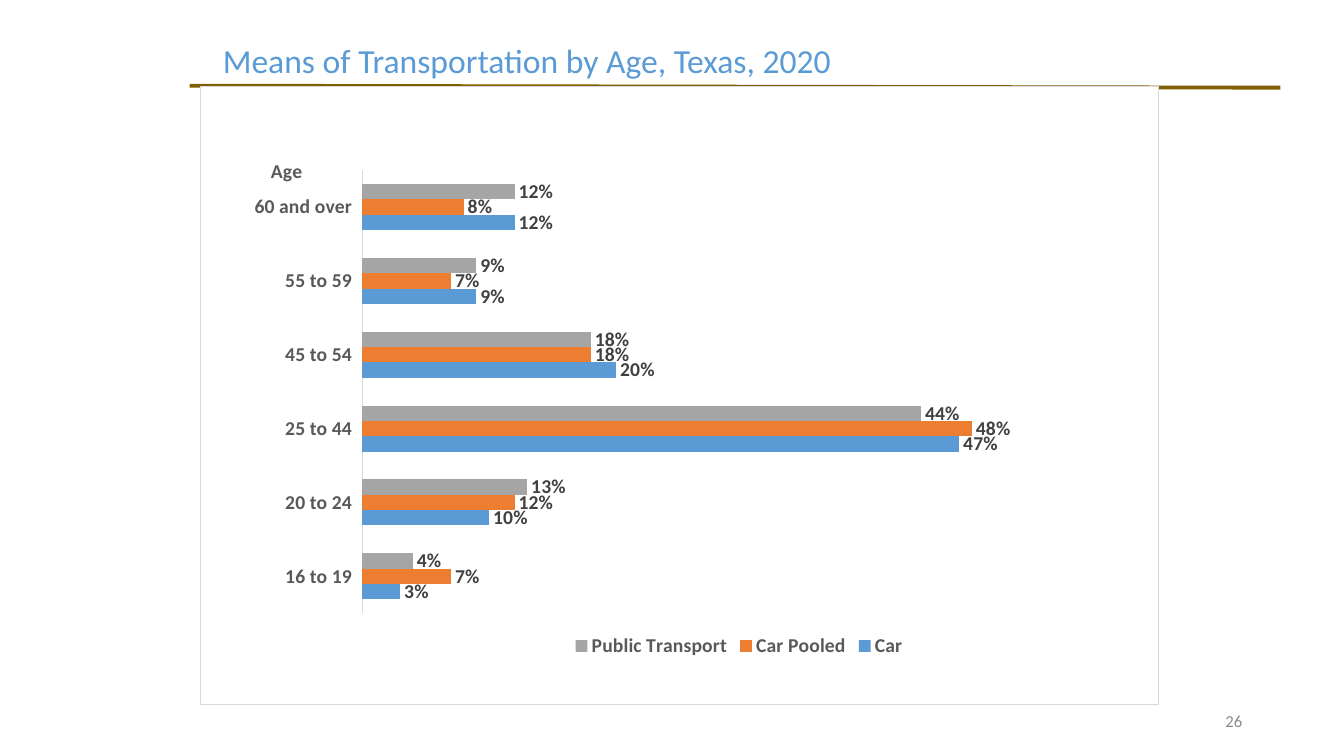
from lxml.etree import SubElement
from pptx import Presentation
from pptx.chart.data import CategoryChartData
from pptx.dml.color import RGBColor
from pptx.enum.chart import XL_CHART_TYPE as ChartType
from pptx.enum.chart import XL_LABEL_POSITION as LabelPos
from pptx.enum.chart import XL_LEGEND_POSITION as LegendPos
from pptx.enum.chart import XL_TICK_LABEL_POSITION as TickLabelPos
from pptx.enum.chart import XL_TICK_MARK as TickMark
from pptx.enum.shapes import MSO_CONNECTOR as Connector
from pptx.enum.text import MSO_ANCHOR as Anchor
from pptx.enum.text import PP_ALIGN as Align
from pptx.oxml import parse_xml
from pptx.oxml.ns import nsdecls, qn
from pptx.util import Pt

PX = 9144
FONT = "Calibri"
BLUE = RGBColor(0x5B, 0x9B, 0xD5)
ORANGE = RGBColor(0xED, 0x7D, 0x31)
GRAY = RGBColor(0xA5, 0xA5, 0xA5)
BROWN = RGBColor(0x80, 0x60, 0x00)
RULE_GRAY = RGBColor(0xD9, 0xD9, 0xD9)
AXIS_TEXT = RGBColor(0x59, 0x59, 0x59)
LABEL_TEXT = RGBColor(0x40, 0x40, 0x40)
NUMBER_TEXT = RGBColor(0x8C, 0x8C, 0x8C)
WHITE = RGBColor(0xFF, 0xFF, 0xFF)

AGES = ["16 to 19", "20 to 24", "25 to 44", "45 to 54", "55 to 59", "60 and over"]
MEANS = [
    ("Car", BLUE, [0.03, 0.10, 0.47, 0.20, 0.09, 0.12]),
    ("Car Pooled", ORANGE, [0.07, 0.12, 0.48, 0.18, 0.07, 0.08]),
    ("Public Transport", GRAY, [0.04, 0.13, 0.44, 0.18, 0.09, 0.12]),
]


def emu(*lengths):
    return [length * PX for length in lengths]


def style_font(font, size, color, bold=False):
    font.name = FONT
    font.size = Pt(size)
    font.bold = bold
    font.color.rgb = color


def set_layout(parent, index, **settings):
    for old in parent.findall(qn("c:layout")):
        parent.remove(old)
    layout = parse_xml(f"<c:layout {nsdecls('c')}/>")
    manual = SubElement(layout, qn("c:manualLayout"))
    for tag, value in settings.items():
        SubElement(manual, qn(f"c:{tag}")).set("val", str(value))
    parent.insert(index, layout)


def add_title(slide, box):
    sp = slide.shapes.title
    sp.left, sp.top, sp.width, sp.height = emu(*box)
    tf = sp.text_frame
    tf.text = "Means of Transportation by Age, Texas, 2020"
    tf.word_wrap = False
    tf.vertical_anchor = Anchor.MIDDLE
    p = tf.paragraphs[0]
    p.alignment = Align.LEFT
    p.line_spacing = 0.9
    style_font(p.runs[0].font, 24, BLUE)


def add_title_rule(slide, box):
    x, y, w, h = box
    line = slide.shapes.add_connector(Connector.STRAIGHT, *emu(x, y, x + w, y + h))
    line.line.color.rgb = BROWN
    line.line.width = Pt(2.75)
    SubElement(line._element.spPr, qn("a:effectLst"))


def add_slide_number(slide, box):
    tf = slide.shapes.add_textbox(*emu(*box)).text_frame
    tf.text = "26"
    tf.word_wrap = True
    tf.vertical_anchor = Anchor.MIDDLE
    p = tf.paragraphs[0]
    p.alignment = Align.RIGHT
    style_font(p.runs[0].font, 12, NUMBER_TEXT)


def style_axes(chart):
    ages = chart.category_axis
    ages.major_tick_mark = ages.minor_tick_mark = TickMark.NONE
    ages.tick_label_position = TickLabelPos.LOW
    ages.format.line.color.rgb = RULE_GRAY
    ages.format.line.width = Pt(0.75)
    style_font(ages.tick_labels.font, 14, AXIS_TEXT, True)

    tf = ages.axis_title.text_frame
    tf.text = "Age"
    style_font(tf.paragraphs[0].runs[0].font, 14, AXIS_TEXT, True)
    body = tf._txBody.find(qn("a:bodyPr"))
    body.set("rot", "0")
    body.set("vert", "horz")
    set_layout(ages.axis_title._element, 1, xMode="edge", yMode="edge", x=0.07, y=0.11)

    shares = chart.value_axis
    shares.minimum_scale, shares.maximum_scale = 0, 0.6
    shares.has_major_gridlines = False
    shares.tick_labels.number_format = "0.0%"
    shares.tick_labels.number_format_is_linked = False
    shares.visible = False


def style_frame(chart):
    chart_space = chart._chartSpace
    frame = parse_xml(
        f'<c:spPr {nsdecls("c", "a")}>'
        f'<a:solidFill><a:srgbClr val="{WHITE}"/></a:solidFill>'
        f'<a:ln w="{Pt(0.75)}"><a:solidFill><a:srgbClr val="{RULE_GRAY}"/>'
        "</a:solidFill></a:ln></c:spPr>"
    )
    chart_space.find(qn("c:chart")).addnext(frame)


def add_transport_chart(slide, box):
    data = CategoryChartData(number_format="0%")
    data.categories = AGES
    for name, _, shares in MEANS:
        data.add_series(name, shares)
    chart = slide.shapes.add_chart(ChartType.BAR_CLUSTERED, *emu(*box), data).chart
    style_font(chart.font, 14, AXIS_TEXT, True)
    chart.has_title = False
    style_frame(chart)
    style_axes(chart)

    plot = chart.plots[0]
    plot.vary_by_categories = False
    plot.gap_width = 182
    plot.overlap = 0
    for series, (_, color, _) in zip(plot.series, MEANS):
        series.format.fill.solid()
        series.format.fill.fore_color.rgb = color
        labels = series.data_labels
        labels.show_value = True
        labels.number_format = "0%"
        labels.number_format_is_linked = False
        labels.position = LabelPos.OUTSIDE_END
        style_font(labels.font, 14, LABEL_TEXT, True)

    plot_area = chart._chartSpace.find(qn("c:chart")).find(qn("c:plotArea"))
    set_layout(plot_area, 0, layoutTarget="inner", xMode="edge", yMode="edge",
               x=0.169, y=0.136, w=0.795, h=0.717)

    chart.has_legend = True
    legend = chart.legend
    legend.position = LegendPos.BOTTOM
    legend.include_in_layout = False
    style_font(legend.font, 14, AXIS_TEXT, True)
    set_layout(legend._element, 1, xMode="edge", yMode="edge", x=0.385, y=0.88)


def main():
    prs = Presentation()
    prs.slide_width, prs.slide_height = emu(1333, 750)
    slide = prs.slides.add_slide(prs.slide_layouts[5])
    add_title_rule(slide, (188, 85, 1082, 2))
    add_slide_number(slide, (942, 695, 300, 40))
    add_title(slide, (211, 39, 629, 46))
    add_transport_chart(slide, (198, 85, 952, 614))
    prs.save("out.pptx")


if __name__ == "__main__":
    main()
